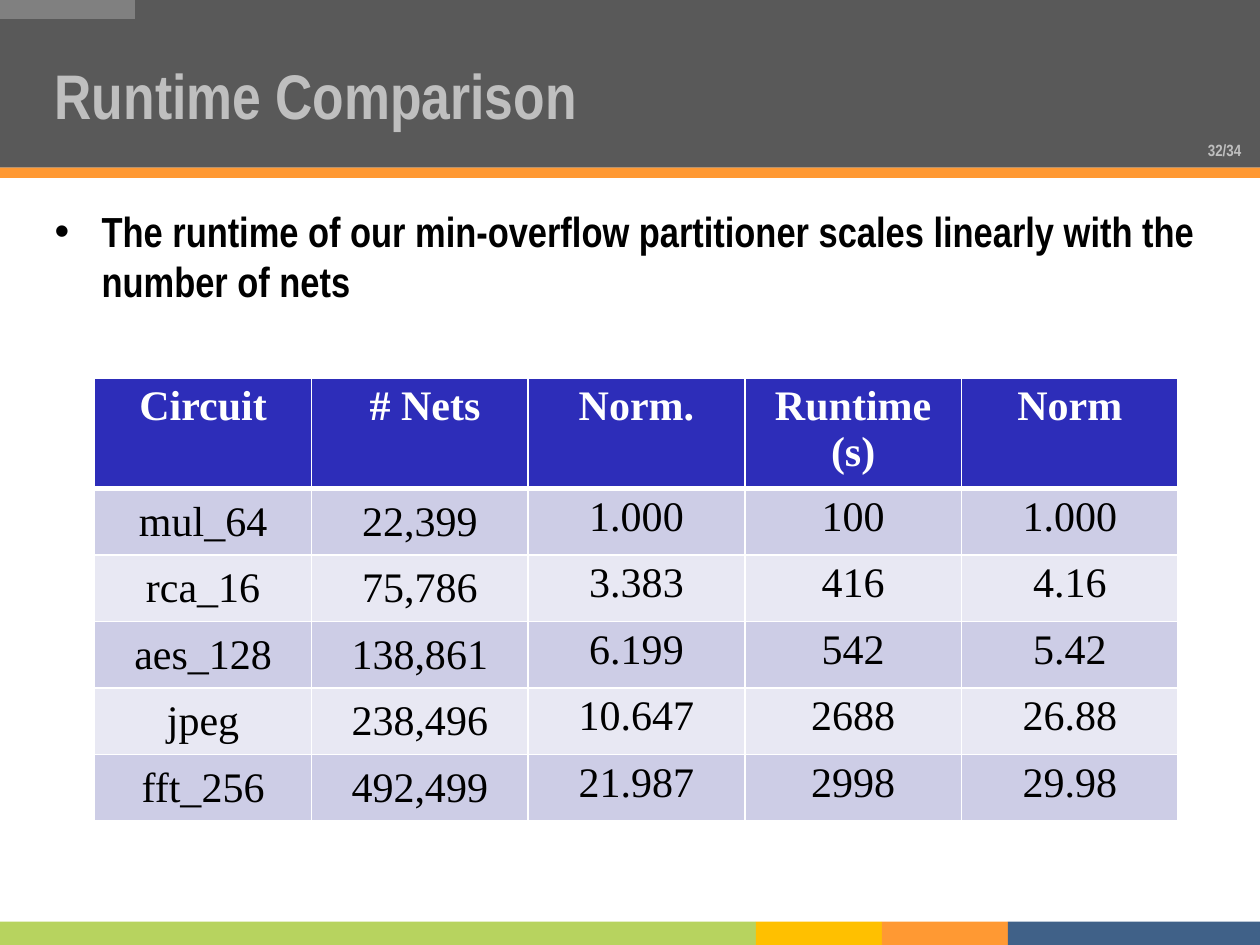
from lxml.etree import SubElement
from pptx import Presentation
from pptx.dml.color import RGBColor
from pptx.enum.shapes import MSO_SHAPE
from pptx.enum.text import MSO_ANCHOR, MSO_AUTO_SIZE, PP_ALIGN
from pptx.oxml import parse_xml
from pptx.oxml.ns import nsdecls, qn
from pptx.util import Cm, Pt

COLORS = {
    "banner": "595959", "tab": "808080", "orange": "FF9933", "green": "B7D35F",
    "yellow": "FFC000", "blue": "406188", "title": "BFBFBF", "text": "000000",
    "white": "FFFFFF", "header": "2D2DB9", "odd": "CDCDE6", "even": "E8E8F3",
}
HEADINGS = ["Circuit", " # Nets", "Norm.", "Runtime (s)", "Norm"]
RESULTS = [
    ["mul_64", "22,399", "1.000", "100", "1.000"],
    ["rca_16", "75,786", "3.383", "416", "4.16"],
    ["aes_128", "138,861", "6.199", "542", "5.42"],
    ["jpeg", "238,496", "10.647", "2688", "26.88"],
    ["fft_256", "492,499", "21.987", "2998", "29.98"],
]


def rgb(name):
    return RGBColor.from_string(COLORS[name])


def write(frame, text, size=24, font="Arial Narrow", color="text", bold=True,
          align=PP_ALIGN.LEFT, baseline=None):
    paragraph = frame.paragraphs[0]
    paragraph.alignment = align
    run = paragraph.add_run()
    run.text = text
    run.font.size = Pt(size)
    run.font.name = font
    run.font.bold = bold
    run.font.color.rgb = rgb(color)
    if baseline is not None:
        run._r.get_or_add_rPr().set("baseline", str(baseline))
    return paragraph


def add_band(slide, left, top, width, height, color):
    band = slide.shapes.add_shape(
        MSO_SHAPE.RECTANGLE, Cm(left), Cm(top), Cm(width), Cm(height))
    band.shadow.inherit = False
    band.fill.solid()
    band.fill.fore_color.rgb = rgb(color)
    band.line.fill.background()


def add_text_area(slide, left, top, width, height):
    area = slide.shapes.add_textbox(Cm(left), Cm(top), Cm(width), Cm(height))
    area.text_frame.word_wrap = True
    return area.text_frame


def add_banner(slide, left, top, width, height):
    add_band(slide, left, top, width, height, "banner")
    add_band(slide, left, top + height, width, 0.21, "orange")
    add_band(slide, left, top, 2.72, 0.38, "tab")

    title = slide.shapes.title
    title.left, title.top = Cm(left + 0.85), Cm(top + 0.64)
    title.width, title.height = Cm(20.32), Cm(2.54)
    title.text_frame.auto_size = MSO_AUTO_SIZE.NONE
    title.text_frame.vertical_anchor = MSO_ANCHOR.MIDDLE
    write(title.text_frame, "Runtime Comparison", size=36, color="title")
    slide.shapes._spTree.append(title._element)

    page = add_text_area(slide, left + width - 2.11, top + height - 0.92, 1.73, 0.56)
    page.margin_left = page.margin_right = page.margin_top = page.margin_bottom = 0
    write(page, "32/34", size=16, color="title", align=PP_ALIGN.RIGHT, baseline=-25000)


def add_footer(slide, left, top, width, height):
    for color, tenths in [("green", 6), ("yellow", 1), ("orange", 1), ("blue", 2)]:
        segment = width * tenths / 10
        add_band(slide, left, top, segment, height, color)
        left += segment


def add_statement(slide, left, top, width, height):
    statement = write(
        add_text_area(slide, left, top, width, height),
        "The runtime of our min-overflow partitioner scales linearly with the number of nets")
    properties = statement._p.get_or_add_pPr()
    properties.set("marL", str(Cm(0.95)))
    properties.set("indent", str(-Cm(0.95)))
    spacing = SubElement(properties, qn("a:spcBef"))
    SubElement(spacing, qn("a:spcPct")).set("val", "20000")
    SubElement(properties, qn("a:buFont")).set("typeface", "Arial")
    SubElement(properties, qn("a:buChar")).set("char", "•")


def border_cell(cell, top_width, bottom_width):
    widths = {"lnL": 1, "lnR": 1, "lnT": top_width, "lnB": bottom_width}
    for position, (side, width) in enumerate(widths.items()):
        cell._tc.get_or_add_tcPr().insert(position, parse_xml(
            f'<a:{side} {nsdecls("a")} w="{Pt(width)}"><a:solidFill>'
            f'<a:srgbClr val="{COLORS["white"]}"/></a:solidFill></a:{side}>'))


def add_runtime_table(slide, left, top, width, header_height, row_height):
    rows = [HEADINGS] + RESULTS
    table = slide.shapes.add_table(
        len(rows), len(HEADINGS), Cm(left), Cm(top), Cm(width),
        Cm(header_height + row_height * len(RESULTS))).table
    for column in table.columns:
        column.width = Cm(width / len(HEADINGS))
    for r, values in enumerate(rows):
        header = r == 0
        table.rows[r].height = Cm(header_height if header else row_height)
        for c, value in enumerate(values):
            cell = table.cell(r, c)
            cell.margin_top = cell.margin_bottom = Cm(0.1)
            cell.fill.solid()
            cell.fill.fore_color.rgb = rgb(
                "header" if header else "odd" if r % 2 else "even")
            centred = not header and c < 2
            cell.vertical_anchor = MSO_ANCHOR.MIDDLE if centred else MSO_ANCHOR.TOP
            border_cell(cell, 3 if r == 1 else 1, 3 if header else 1)
            write(cell.text_frame, value, font="Times New Roman", bold=header,
                  color="white" if header else "text", align=PP_ALIGN.CENTER)


def main():
    deck = Presentation()
    deck.slide_width, deck.slide_height = Cm(25.4), Cm(19.05)
    slide = deck.slides.add_slide(deck.slide_layouts[5])
    add_banner(slide, 0, 0, 25.4, 3.38)
    add_footer(slide, 0, 18.58, 25.4, 0.47)
    add_statement(slide, 0.85, 4.02, 23.7, 13.97)
    add_runtime_table(slide, 1.91, 7.62, 21.84, 1.7, 1.34)
    deck.save("out.pptx")


if __name__ == "__main__":
    main()
